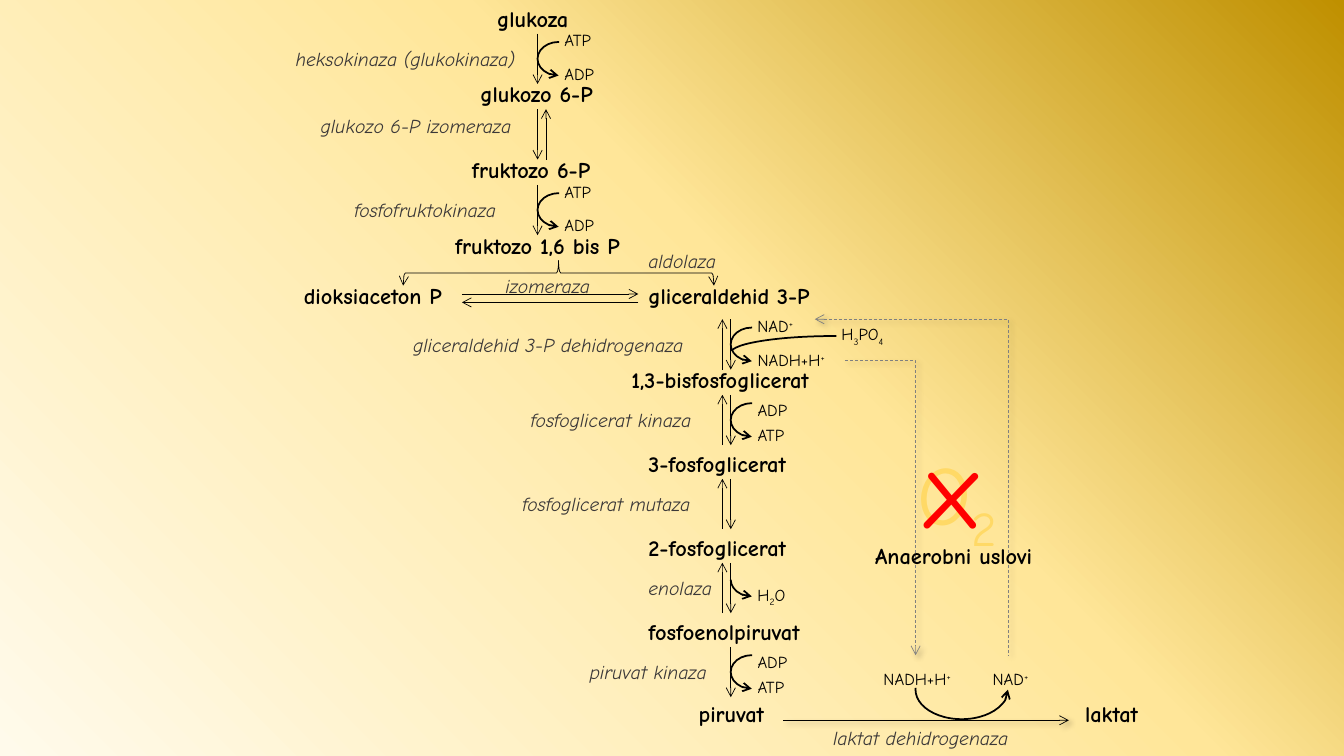
from copy import deepcopy

from lxml.etree import SubElement
from pptx import Presentation
from pptx.dml.color import RGBColor
from pptx.enum.dml import MSO_LINE
from pptx.enum.shapes import MSO_CONNECTOR, MSO_SHAPE
from pptx.enum.text import MSO_AUTO_SIZE
from pptx.oxml.ns import qn
from pptx.util import Pt

PX = 9525  # 96 px to the inch
BLACK, ENZYME_GREY, LINK_GREY = "000000", "3B3838", "808080"
PLUS = ("+", 30)
# Cofactors: runs with their baseline shift, and the box width
ATP = [("ATP", 0)], 51
ADP = [("ADP", 0)], 51
NAD = [("NAD", 0), PLUS], 60
NADH = [("NADH+H", 0), PLUS], 94
WATER = [("H", 0), ("2", -25), ("O", 0)], 52
PHOSPHATE = [("H", 0), ("3", -25), ("PO", 0), ("4", -25)], 66


def color(hex_string):
    return RGBColor.from_string(hex_string)


def add_label(shapes, left, top, width, runs, size, hex_color=BLACK, bold=False, italic=False):
    box = shapes.add_textbox(left * PX, top * PX, width * PX, round(size * 1.6 + 10) * PX)
    frame = box.text_frame
    frame.word_wrap = False
    frame.auto_size = MSO_AUTO_SIZE.SHAPE_TO_FIT_TEXT
    paragraph = frame.paragraphs[0]
    for text, baseline in runs:
        run = paragraph.add_run()
        run.text = text
        run.font.name = "Comic Neue"
        run.font.size = Pt(size)
        run.font.bold = bold
        run.font.italic = italic
        run.font.color.rgb = color(hex_color)
        if baseline:
            run._r.get_or_add_rPr().set("baseline", str(baseline * 1000))


def add_substance(shapes, left, top, width, name):
    add_label(shapes, left, top, width, [(name, 0)], 16, bold=True)


def add_enzyme(shapes, left, top, width, name):
    add_label(shapes, left, top, width, [(name, 0)], 14, ENZYME_GREY, italic=True)


def add_cofactor(shapes, left, top, cofactor):
    runs, width = cofactor
    add_label(shapes, left, top, width, runs, 12)


def style_line(shape, width, hex_color=BLACK, ends=()):
    shape.line.width = Pt(width)
    shape.line.color.rgb = color(hex_color)
    for end in ends:
        SubElement(shape.line._get_or_add_ln(), qn(f"a:{end}End")).set("type", "arrow")


def add_arrow(shapes, start, finish, shadow=False, link_end=None):
    """Straight arrow, or a dashed right-angled link when link_end is given."""
    kind = MSO_CONNECTOR.ELBOW if link_end else MSO_CONNECTOR.STRAIGHT
    arrow = shapes.add_connector(kind, *(value * PX for value in (*start, *finish)))
    properties = arrow._element.spPr
    if link_end:
        properties.find(qn("a:prstGeom")).set("prst", "bentConnector2")
        arrow.line.dash_style = MSO_LINE.DASH
    style_line(arrow, 0.5, LINK_GREY if link_end else BLACK, [link_end or "tail"])
    effects = SubElement(properties, qn("a:effectLst"))
    if shadow:
        outer = SubElement(effects, qn("a:outerShdw"), blurRad=str(Pt(4)), dist=str(Pt(3)),
                           dir="2700000", algn="tl", rotWithShape="0")
        shade = SubElement(outer, qn("a:srgbClr"), val=BLACK)
        SubElement(shade, qn("a:alpha"), val="40000")


def add_outline(shapes, kind, left, top, width, height, line_width, ends):
    shape = shapes.add_shape(kind, left * PX, top * PX, width * PX, height * PX)
    shape.shadow.inherit = False
    shape.fill.background()
    style_line(shape, line_width, ends=ends)
    return shape


def add_arc(shapes, left, top, width, height, first, last, ends=("head",)):
    arc = add_outline(shapes, MSO_SHAPE.ARC, left, top, width, height, 1.25, ends)
    for index, degrees in enumerate((first, last)):
        arc.adjustments[index] = degrees * 0.6


def add_reaction(shapes, left, top, reverse=0, arc_drop=8, arc_last=271.67, cofactors=()):
    """Downward arrow, its reverse at an offset, and the cofactors at their drops."""
    add_arrow(shapes, (left, top), (left, top + 48))
    if reverse:
        add_arrow(shapes, (left + reverse, top + 48), (left + reverse, top))
    if cofactors:
        add_arc(shapes, left, top + arc_drop, 40, 32, 89.77, arc_last)
    for drop, cofactor in cofactors:
        add_cofactor(shapes, left + 16, top + drop, cofactor)


def add_hexose_stage(shapes, left, top):
    names = [(-48, 94, "glukoza"), (-64, 141, "glukozo 6-P"),
             (-72, 155, "fruktozo 6-P"), (-88, 213, "fruktozo 1,6 bis P")]
    for row, (shift, width, name) in enumerate(names):
        add_substance(shapes, left + shift, top + 72 * row, width, name)
    enzymes = [(-240, 40, 250, "heksokinaza (glukokinaza)"),
               (-216, 104, 213, "glukozo 6-P izomeraza"),
               (-184, 184, 180, "fosfofruktokinaza")]
    for shift, drop, width, name in enzymes:
        add_enzyme(shapes, left + shift, top + drop, width, name)
    phosphorylation = [(-8, ATP), (24, ADP)]
    add_reaction(shapes, left, top + 32, cofactors=phosphorylation)
    add_reaction(shapes, left, top + 104, reverse=8)
    add_reaction(shapes, left, top + 176, cofactors=phosphorylation)


def add_split_stage(shapes, left, top):
    brace = add_outline(shapes, MSO_SHAPE.RIGHT_BRACE, left + 240, top - 120, 24, 296, 0.5,
                        ("head", "tail"))
    brace.rotation = 270
    add_substance(shapes, left, top + 32, 166, "dioksiaceton P")
    add_enzyme(shapes, left + 328, top, 92, "aldolaza")
    add_enzyme(shapes, left + 192, top + 24, 110, "izomeraza")
    near, far = left + 160, left + 328
    add_arrow(shapes, (near, top + 48), (far, top + 48))
    add_arrow(shapes, (far, top + 56), (near, top + 56))


def add_triose_stage(shapes, left, top):
    names = [(-88, 0, 198, "gliceraldehid 3-P"), (-104, 80, 231, "1,3-bisfosfoglicerat"),
             (-88, 160, 180, "3-fosfoglicerat"), (-88, 240, 180, "2-fosfoglicerat"),
             (-88, 320, 185, "fosfoenolpiruvat"), (-40, 398, 91, "piruvat")]
    for shift, drop, width, name in names:
        add_substance(shapes, left + shift, top + drop, width, name)
    kinase = {"cofactors": [(0, ADP), (24, ATP)]}
    reactions = [
        (40, -312, 300, "gliceraldehid 3-P dehidrogenaza",
         {"reverse": -8, "cofactors": [(-8, NAD), (24, NADH)]}),
        (112, -200, 202, "fosfoglicerat kinaza", {"reverse": -8, **kinase}),
        (192, -208, 209, "fosfoglicerat mutaza", {"reverse": -8}),
        (272, -88, 86, "enolaza",
         {"reverse": -8, "arc_drop": 0, "arc_last": 179.45, "cofactors": [(16, WATER)]}),
        (352, -144, 147, "piruvat kinaza", kinase),
    ]
    for drop, shift, width, enzyme, details in reactions:
        add_reaction(shapes, left, top + drop, **details)
        add_enzyme(shapes, left + shift, top + drop + 8, width, enzyme)
    # Phosphate joining the first reaction
    add_arc(shapes, left, top + 56, 200, 32, 181.05, 271.8, ends=())
    add_cofactor(shapes, left + 96, top + 40, PHOSPHATE)


def add_lactate_stage(shapes, left, top):
    add_arrow(shapes, (left, top + 54), (left + 272, top + 54), shadow=True)
    add_substance(shapes, left + 278, top + 30, 81, "laktat")
    add_enzyme(shapes, left + 38, top + 55, 204, "laktat dehidrogenaza")
    add_arc(shapes, left + 126, top - 3, 88, 56, 359.9, 182.42)
    add_cofactor(shapes, left + 86, top, NADH)
    add_cofactor(shapes, left + 190, top, NAD)
    # Cofactor recycling links
    add_arrow(shapes, (left + 30, top - 328), (left + 214, top - 8), shadow=True, link_end="head")
    add_arrow(shapes, (left + 59, top - 289), (left + 126, top - 8), shadow=True, link_end="tail")


def add_anaerobic_note(shapes, left, top):
    add_label(shapes, left + 40, top + 24, 117, [("O", 0), ("2", -25)], 60, "FFD966")
    add_label(shapes, left + 48, top, 83, [("x", 0)], 80, "FF0000")
    add_substance(shapes, left, top + 120, 187, "Anaerobni uslovi")


def paint_background(slide):
    fill = slide.background.fill
    fill.gradient()
    fill.gradient_angle = 45
    stop_list = slide._element.find(".//" + qn("a:gsLst"))
    stop_list.append(deepcopy(stop_list[-1]))
    stops = [(0, "FFFAEB"), (0.58, "FFE699"), (1, "BF9000")]
    for stop, (position, hex_color) in zip(fill.gradient_stops, stops):
        stop.position = position
        stop.color.rgb = color(hex_color)


def main():
    presentation = Presentation()
    presentation.slide_width, presentation.slide_height = 1280 * PX, 720 * PX
    slide = presentation.slides.add_slide(presentation.slide_layouts[6])
    paint_background(slide)
    pathway = slide.shapes.add_group_shape().shapes
    add_hexose_stage(pathway, 512, 0)
    add_split_stage(pathway, 280, 232)
    add_triose_stage(pathway, 696, 264)
    add_lactate_stage(pathway, 746, 632)
    add_anaerobic_note(slide.shapes.add_group_shape().shapes, 824, 392)
    presentation.save("out.pptx")


if __name__ == "__main__":
    main()
